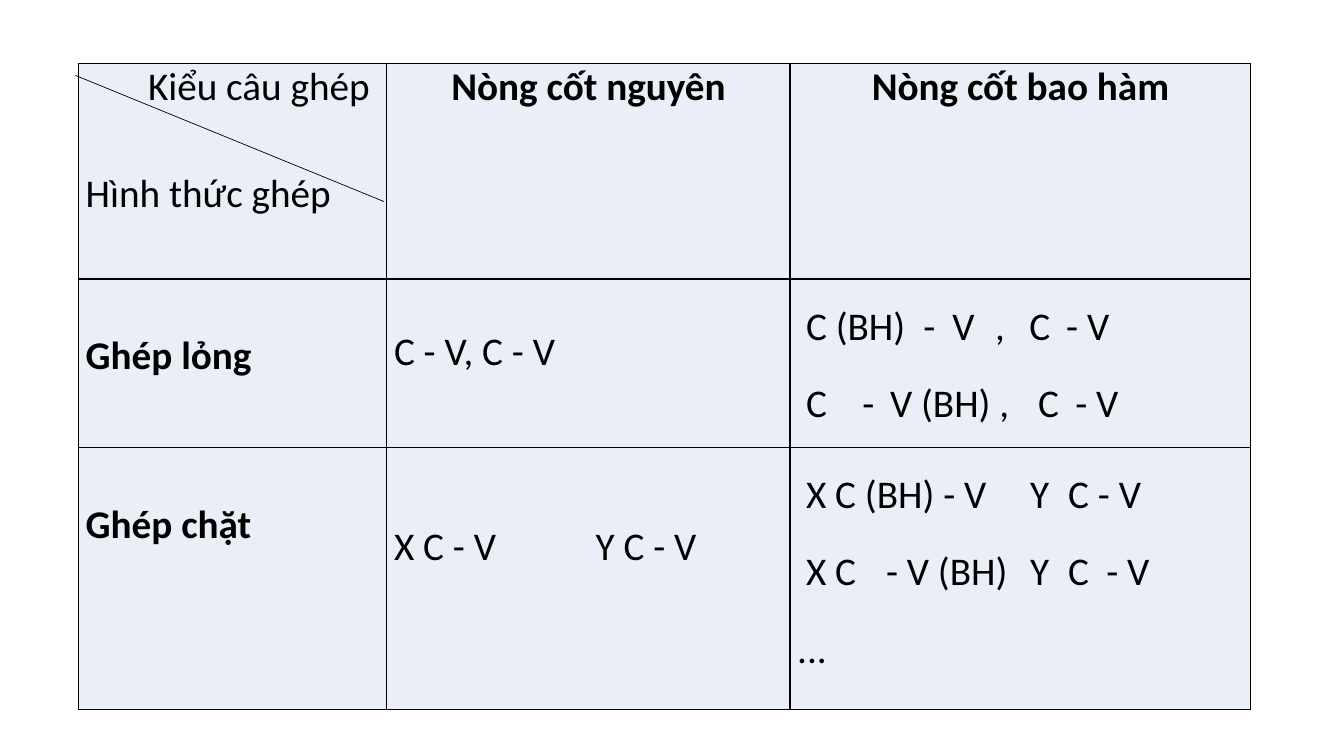
"""Build a slide with a table of compound sentence types."""
from dataclasses import dataclass

from lxml import etree
from pptx import Presentation
from pptx.dml.color import RGBColor
from pptx.enum.shapes import MSO_CONNECTOR
from pptx.enum.text import PP_ALIGN
from pptx.oxml.ns import qn
from pptx.slide import Slide
from pptx.table import _Cell
from pptx.text.text import _Paragraph
from pptx.util import Cm, Pt

LINE = MSO_CONNECTOR.STRAIGHT
CENTER = PP_ALIGN.CENTER
JUST = PP_ALIGN.JUSTIFY


@dataclass(frozen=True)
class Theme:
    font: str = "Calibri"
    size: float = 28
    ink: str = "000000"
    fill: str = "EAEFF7"
    border: float = 1
    rule: float = 0.5
    gap: float = 4
    side: float = 0.18


@dataclass(frozen=True)
class Para:
    text: str
    bold: bool = False
    align: PP_ALIGN = JUST
    lead: float = 1
    gap: float = Theme.gap
    indent: float = 0
    tabs: tuple[float, ...] = ()


@dataclass(frozen=True)
class Box:
    paras: tuple[Para, ...]
    top: float = 0


THEME = Theme()
LEFT, TOP = 1.98, 1.6
COLS = (7.77, 10.16, 11.61)
ROWS = (5.43, 4.24, 6.6)
DROP = 1.35


def head(text: str) -> Box:
    """Describe a column heading."""
    return Box((Para(text, bold=True, align=CENTER),))


def side(text: str) -> Box:
    """Describe a row heading."""
    return Box((Para(text, bold=True),), DROP)


def form(text: str, *tabs: float) -> Para:
    """Describe a sentence pattern."""
    return Para(text, lead=1.5, tabs=tabs)


GRID = (
    (
        Box((Para("Kiểu câu ghép", indent=1.57), Para("Hình thức ghép", gap=42))),
        head("Nòng cốt nguyên"),
        head("Nòng cốt bao hàm"),
    ),
    (
        side("Ghép lỏng"),
        Box((form("C - V, C - V"),), 0.63),
        Box((
            form(" C (BH)\t-\tV\t,\tC\t- V", 3.18, 3.91, 4.99, 5.85, 6.78),
            form(" C\t-\tV (BH) ,\tC\t- V", 1.64, 2.34, 6.07, 7.01),
        )),
    ),
    (
        side("Ghép chặt"),
        Box((form("X C - V\tY C - V", 5.08),), 1.3),
        Box((
            form(" X C (BH) - V\tY\tC - V", 5.87, 6.83),
            form(" X C\t- V (BH)\tY\tC\t- V", 2.24, 5.87, 6.83, 7.79),
            form("..."),
        )),
    ),
)


def write(par: _Paragraph, item: Para) -> None:
    """Fill one paragraph."""
    par.alignment = item.align
    par.line_spacing = item.lead
    par.space_before = Pt(item.gap)
    props = par._p.get_or_add_pPr()
    if item.indent:
        props.set("marL", str(Cm(item.indent)))
    if item.tabs:
        stops = etree.SubElement(props, qn("a:tabLst"))
        for pos in item.tabs:
            etree.SubElement(stops, qn("a:tab"), pos=str(Cm(pos)), algn="l")
    run = par.add_run()
    run.text = item.text
    font = run.font
    font.name, font.size, font.bold = THEME.font, Pt(THEME.size), item.bold
    font.color.rgb = RGBColor.from_string(THEME.ink)


def frame(cell: _Cell) -> None:
    """Draw the four borders of a cell."""
    props = cell._tc.get_or_add_tcPr()
    for edge in ("lnL", "lnR", "lnT", "lnB"):
        line = etree.SubElement(props, qn(f"a:{edge}"), w=str(Pt(THEME.border)))
        paint = etree.SubElement(line, qn("a:solidFill"))
        etree.SubElement(paint, qn("a:srgbClr"), val=THEME.ink)


def fill(cell: _Cell, box: Box) -> None:
    """Format a cell and write its text."""
    frame(cell)
    cell.fill.solid()
    cell.fill.fore_color.rgb = RGBColor.from_string(THEME.fill)
    cell.margin_left = cell.margin_right = Cm(THEME.side)
    cell.margin_top, cell.margin_bottom = Cm(box.top), Cm(0)
    text = cell.text_frame
    for num, item in enumerate(box.paras):
        write(text.add_paragraph() if num else text.paragraphs[0], item)


def grid(slide: Slide) -> None:
    """Draw the table."""
    table = slide.shapes.add_table(
        len(ROWS), len(COLS), Cm(LEFT), Cm(TOP), Cm(sum(COLS)), Cm(sum(ROWS))
    ).table
    for col, width in zip(table.columns, COLS):
        col.width = Cm(width)
    for row, height, boxes in zip(table.rows, ROWS, GRID):
        row.height = Cm(height)
        for cell, box in zip(row.cells, boxes):
            fill(cell, box)


def slant(slide: Slide) -> None:
    """Draw the diagonal of the corner cell."""
    line = slide.shapes.add_connector(LINE, Cm(1.9), Cm(1.9), Cm(9.68), Cm(5.08))
    line.line.color.rgb = RGBColor.from_string(THEME.ink)
    line.line.width = Pt(THEME.rule)
    etree.SubElement(line._element.spPr, qn("a:effectLst"))


def main() -> None:
    """Build and save the deck."""
    deck = Presentation()
    deck.slide_width, deck.slide_height = Cm(33.87), Cm(19.05)
    slide = deck.slides.add_slide(deck.slide_layouts[6])
    grid(slide)
    slant(slide)
    deck.save("out.pptx")


if __name__ == "__main__":
    main()
